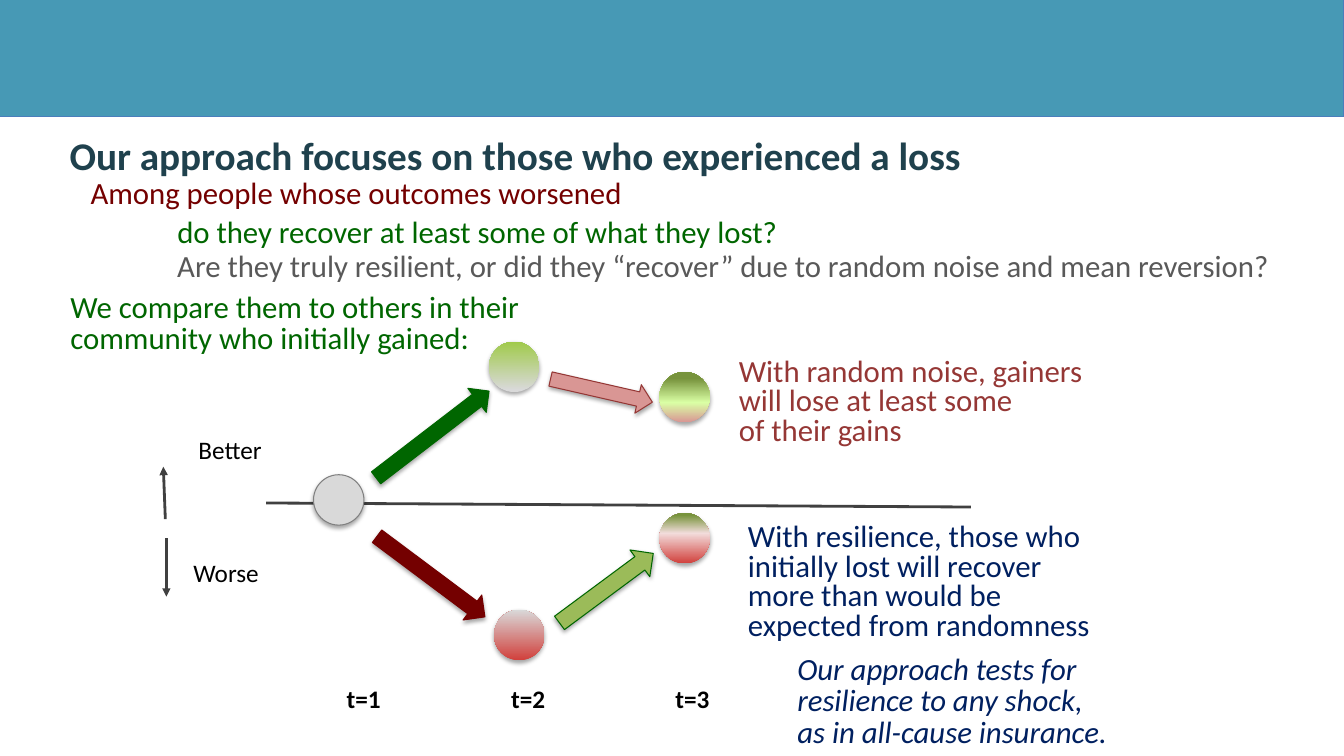
from math import atan2, degrees, hypot

from lxml import etree
from pptx import Presentation
from pptx import util as u
from pptx.dml.color import RGBColor
from pptx.enum import shapes, text
from pptx.oxml.ns import qn

BLACK = RGBColor(0x00, 0x00, 0x00)
BAND = RGBColor(0x47, 0x99, 0xB5)
BAND_EDGE = RGBColor(0x4B, 0x7E, 0xBC)
TEAL = RGBColor(0x1F, 0x41, 0x4D)
MAROON = RGBColor(0x74, 0x00, 0x00)
GREEN = RGBColor(0x00, 0x66, 0x00)
LEAF = RGBColor(0x9B, 0xBB, 0x59)
LIME = RGBColor(0xA0, 0xCA, 0x4A)
PALE_LIME = RGBColor(0xDA, 0xFF, 0xA5)
OLIVE = RGBColor(0x77, 0x93, 0x3C)
RED = RGBColor(0xD1, 0x40, 0x3C)
BRICK = RGBColor(0x95, 0x37, 0x35)
PINK = RGBColor(0xD9, 0x96, 0x94)
BLUSH = RGBColor(0xF2, 0xDC, 0xDB)
NAVY = RGBColor(0x00, 0x20, 0x60)
SILVER = RGBColor(0xD9, 0xD9, 0xD9)
GREY = RGBColor(0x80, 0x80, 0x80)
SLATE = RGBColor(0x59, 0x59, 0x59)
CHARCOAL = RGBColor(0x40, 0x40, 0x40)

WIDTH, HEIGHT = 13.33, 7.5
BAND_HEIGHT = 1.16
CIRCLE = 0.5
TIME_STEP = 1.63

TITLE = ("Our approach focuses on those who experienced a loss", (0.59, 1.25, 11.09, 0.57))
TIMES = ("t=1\tt=2\tt=3", (3.34, 6.73, 4.38, 0.4))
STATEMENTS = [
    ("Among people whose outcomes worsened", (0.8, 1.73, 7.91, 0.53),
     dict(color=MAROON, spacing=0.85)),
    ("do they recover at least some of what they lost?", (1.66, 2.12, 7.52, 0.53),
     dict(color=GREEN, spacing=0.85)),
    ("Are they truly resilient, or did they “recover” due to random noise and mean reversion?",
     (1.66, 2.45, 11.43, 0.37), dict(color=SLATE, spacing=0.85)),
    ("We compare them to others in their community who initially gained:",
     (0.6, 2.86, 4.72, 0.61), dict(color=GREEN, spacing=0.85)),
    ("With random noise, gainers will lose at least some\nof their gains",
     (7.23, 3.51, 3.73, 0.95), dict(color=BRICK, spacing=0.8)),
    ("With resilience, those who initially lost will recover more than would be "
     "expected from randomness", (7.32, 5.15, 3.73, 1.27), dict(color=NAVY, spacing=0.8)),
    ("Our approach tests for resilience to any shock,\nas in all-cause insurance.",
     (7.81, 6.45, 3.73, 1.05), dict(color=NAVY, spacing=0.85, italic=True)),
    ("Better", (1.87, 4.26, 0.85, 0.4), dict(size=18, wrap=False)),
    ("Worse", (1.82, 5.48, 0.9, 0.4), dict(size=18, wrap=False)),
]
LINES = [
    ((2.64, 4.99), (9.63, 5.03), False),
    ((1.64, 5.15), (1.62, 4.63), True),
    ((1.65, 5.34), (1.65, 5.92), True),
]
CIRCLES = [
    ((3.11, 4.71), [(0, SILVER)]),
    ((4.85, 3.39), [(4, SILVER), (100, LIME)]),
    ((4.9, 6.05), [(0, RED), (100, SILVER)]),
    ((6.54, 5.09), [(0, RED), (60, BLUSH), (96, OLIVE)]),
    ((6.54, 3.69), [(0, PINK), (39, PALE_LIME), (87, OLIVE)]),
]
ARROWS = [
    ((5.46, 3.76), (6.47, 3.99), 0.29, PINK, BRICK),
    ((5.55, 6.18), (6.48, 5.49), 0.33, LEAF, GREEN),
    ((3.74, 5.32), (4.81, 6.12), 0.31, MAROON, MAROON),
    ((3.73, 4.74), (4.85, 3.88), 0.3, GREEN, GREEN),
]


def inches(*lengths):
    return [u.Inches(length) for length in lengths]


def write(box, words, *, color=BLACK, size=22, spacing=None, bold=False, italic=False,
          wrap=True, tabs=()):
    frame = box.text_frame
    frame.word_wrap = wrap
    frame.auto_size = text.MSO_AUTO_SIZE.NONE
    frame.vertical_anchor = text.MSO_ANCHOR.TOP
    frame.text = words
    for para in frame.paragraphs:
        para.alignment = text.PP_ALIGN.LEFT
        if spacing:
            para.line_spacing = spacing
        if tabs:
            stops = etree.SubElement(para._p.get_or_add_pPr(), qn("a:tabLst"))
            for stop in tabs:
                etree.SubElement(stops, qn("a:tab"), pos=str(u.Inches(stop)), algn="l")
        for span in para.runs:
            span.font.name = "Calibri"
            span.font.size = u.Pt(size)
            span.font.bold = bold
            span.font.italic = italic
            span.font.color.rgb = color


def add_solid(page, kind, place, fill, edge, shadow=True):
    shape = page.shapes.add_shape(kind, *inches(*place))
    shape.fill.solid()
    shape.fill.fore_color.rgb = fill
    shape.line.color.rgb = edge
    shape.line.width = u.Pt(0.75)
    shape.shadow.inherit = False
    if shadow:
        effects = shape._element.spPr.find(qn("a:effectLst"))
        outer = etree.SubElement(effects, qn("a:outerShdw"), blurRad=str(u.Pt(3.1)),
                                 dist=str(u.Pt(1.8)), dir="5400000", rotWithShape="0")
        tint = etree.SubElement(outer, qn("a:srgbClr"), val=str(BLACK))
        etree.SubElement(tint, qn("a:alpha"), val="35000")
    return shape


def add_circle(page, corner, stops):
    circle = add_solid(page, shapes.MSO_SHAPE.FLOWCHART_CONNECTOR,
                       (*corner, CIRCLE, CIRCLE), stops[0][1], GREY)
    if len(stops) > 1:
        circle.line.fill.background()
        circle.fill.gradient()
        circle.fill.gradient_angle = 90
        ramp = circle._element.spPr.find(qn("a:gradFill")).find(qn("a:gsLst"))
        for old in list(ramp):
            ramp.remove(old)
        for share, color in stops:
            stop = etree.SubElement(ramp, qn("a:gs"), pos=str(share * 1000))
            etree.SubElement(stop, qn("a:srgbClr"), val=str(color))


def add_arrow(page, start, end, width, fill, edge):
    run, drop = end[0] - start[0], end[1] - start[1]
    length = hypot(run, drop)
    left = (start[0] + end[0] - width) / 2
    top = (start[1] + end[1] - length) / 2
    arrow = add_solid(page, shapes.MSO_SHAPE.DOWN_ARROW, (left, top, width, length), fill, edge)
    if drop < 0:
        arrow._element.spPr.find(qn("a:xfrm")).set("flipV", "1")
        arrow.rotation = degrees(atan2(run, -drop))
    else:
        arrow.rotation = degrees(atan2(-run, drop)) % 360


def add_line(page, start, end, pointed):
    line = page.shapes.add_connector(shapes.MSO_CONNECTOR.STRAIGHT, *inches(*start, *end))
    line.line.color.rgb = CHARCOAL
    line.line.width = u.Pt(2)
    if pointed:
        etree.SubElement(line.line._get_or_add_ln(), qn("a:tailEnd"), type="triangle")
    etree.SubElement(line._element.spPr, qn("a:effectLst"))


def main():
    deck = Presentation()
    deck.slide_width, deck.slide_height = inches(WIDTH, HEIGHT)
    page = deck.slides.add_slide(deck.slide_layouts[5])

    add_solid(page, shapes.MSO_SHAPE.RECTANGLE, (0, 0, WIDTH, BAND_HEIGHT), BAND, BAND_EDGE,
              shadow=False)

    words, place = TITLE
    title = page.shapes.title
    title.left, title.top, title.width, title.height = inches(*place)
    write(title, words, color=TEAL, size=28, bold=True)

    for line in LINES:
        add_line(page, *line)
    for circle in CIRCLES:
        add_circle(page, *circle)
    for arrow in ARROWS:
        add_arrow(page, *arrow)
    for words, place, style in STATEMENTS:
        write(page.shapes.add_textbox(*inches(*place)), words, **style)

    words, place = TIMES
    write(page.shapes.add_textbox(*inches(*place)), words, size=18, bold=True,
          tabs=(TIME_STEP, 2 * TIME_STEP))
    deck.save("out.pptx")


if __name__ == "__main__":
    main()
